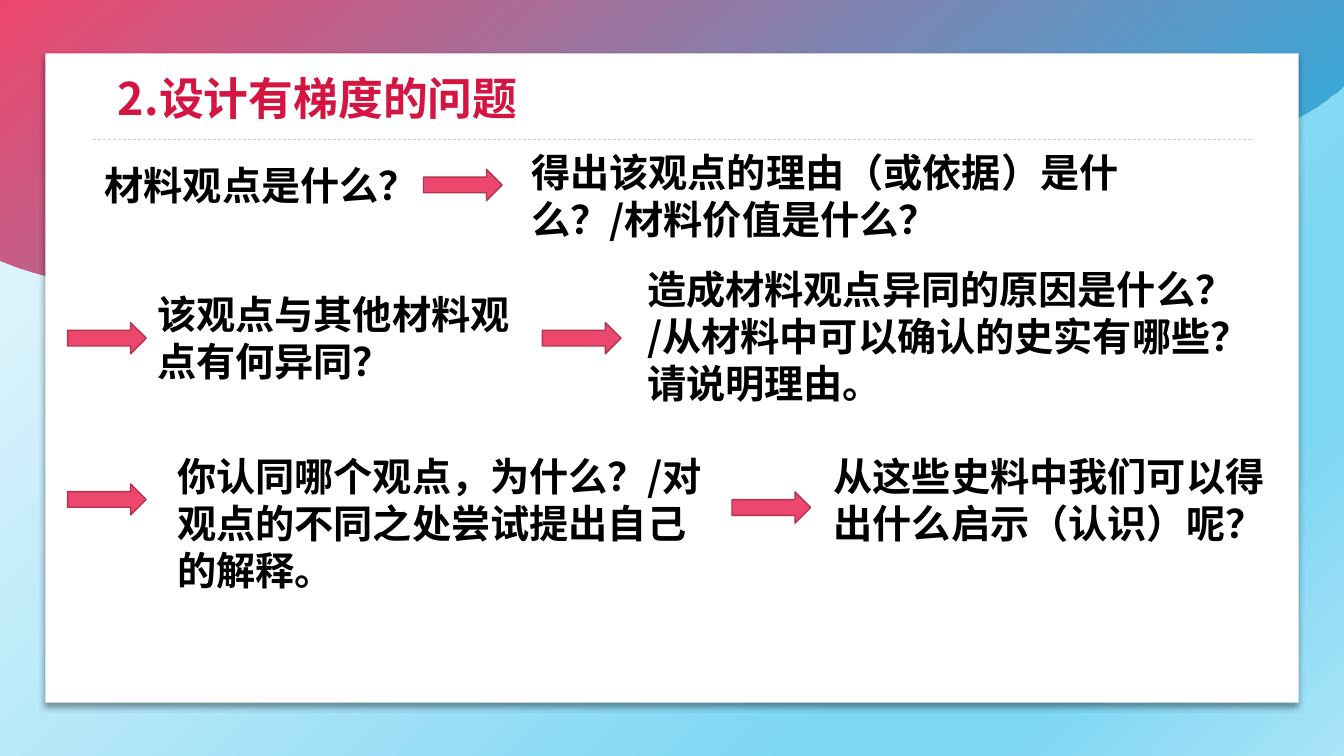
from lxml.etree import SubElement
from pptx import Presentation
from pptx.dml.color import RGBColor
from pptx.enum.dml import MSO_LINE
from pptx.enum.shapes import MSO_CONNECTOR, MSO_SHAPE
from pptx.enum.text import MSO_ANCHOR, MSO_AUTO_SIZE, PP_ALIGN
from pptx.oxml import parse_xml
from pptx.oxml.ns import nsdecls, qn
from pptx.util import Pt

PX = 9144
FONT = "Noto Sans CJK SC"
PINK = RGBColor(0xEE, 0x47, 0x6E)
DARK_PINK = RGBColor(0xB0, 0x35, 0x51)
CRIMSON = RGBColor(0xD4, 0x14, 0x41)
BLUE = RGBColor(0x16, 0xB3, 0xE8)
PALE = RGBColor(0xF1, 0xFA, 0xFE)
SKY = RGBColor(0x7D, 0xD6, 0xF3)
LIGHT_SKY = RGBColor(0xA9, 0xE4, 0xF7)
GREY = RGBColor(0xD0, 0xCE, 0xCE)
WHITE = RGBColor(0xFF, 0xFF, 0xFF)
BLACK = RGBColor(0, 0, 0)

SLIDE = (0, 0, 1333, 750)
CARD = (45, 53, 1243, 644)
ARROW_SIZE = (78, 31)
WAVE_START = (0, 258)
WAVE = [
    ((122, 304), (266, 311), (393, 274)),
    ((530, 235), (648, 151), (792, 136)),
    ((936, 121), (1088, 180), (1227, 142)),
    ((1267, 131), (1304, 111), (1333, 85)),
]
QUESTIONS = [
    ((94, 155, 351, 57), "材料观点是什么？"),
    ((517, 142, 702, 104), "得出该观点的理由（或依据）是什么？/材料价值是什么？"),
    ((146, 283, 405, 104), "该观点与其他材料观点有何异同？"),
    ((632, 258, 603, 151), "造成材料观点异同的原因是什么？/从材料中可以确认的史实有哪些？请说明理由。"),
    ((166, 444, 560, 151), "你认同哪个观点，为什么？/对观点的不同之处尝试提出自己的解释。"),
    ((817, 444, 461, 104), "从这些史料中我们可以得出什么启示（认识）呢？"),
]
ARROWS = [(420, 168), (67, 320), (538, 320), (67, 480), (726, 488)]


def emu(box):
    return [v * PX for v in box]


def set_gradient(fill, stops, direction):
    fill.gradient()
    grad = fill._fill._gradFill
    for child in list(grad):
        grad.remove(child)
    gs_lst = SubElement(grad, qn("a:gsLst"))
    for pos, color, alpha in stops:
        gs = SubElement(gs_lst, qn("a:gs"), pos=str(pos * 1000))
        clr = SubElement(gs, qn("a:srgbClr"), val=str(color))
        if alpha < 100:
            SubElement(clr, qn("a:alpha"), val=str(alpha * 1000))
    grad.append(parse_xml(direction))


def curve_points(start, curves, steps=20):
    points = []
    for a, b, end in curves:
        for i in range(1, steps + 1):
            t = i / steps
            u = 1 - t
            points.append(tuple(
                u**3 * p0 + 3 * u**2 * t * p1 + 3 * u * t**2 * p2 + t**3 * p3
                for p0, p1, p2, p3 in zip(start, a, b, end)))
        start = end
    return points


def add_backdrop(s, box):
    x, y, w, h = box
    radial = (f'<a:path {nsdecls("a")} path="circle">'
              '<a:fillToRect r="100000" b="100000"/></a:path>')
    set_gradient(s.background.fill, [(0, PALE, 100), (74, SKY, 100),
                                     (83, SKY, 100), (100, LIGHT_SKY, 100)], radial)
    points = [(x + px, y + py) for px, py in curve_points(WAVE_START, WAVE)]
    fb = s.shapes.build_freeform(x, y, scale=PX)
    fb.add_line_segments([(x + WAVE_START[0], y + WAVE_START[1])] + points + [(x + w, y)])
    sp = fb.convert_to_shape()
    sp.shadow.inherit = False
    sp.line.fill.background()
    set_gradient(sp.fill, [(0, PINK, 100), (100, BLUE, 90)],
                 f'<a:lin {nsdecls("a")} ang="3000000" scaled="0"/>')


def add_card(s, box):
    x, y, w, h = box
    sp = s.shapes.add_shape(MSO_SHAPE.RECTANGLE, *emu(box))
    sp.shadow.inherit = False
    sp.fill.solid()
    sp.fill.fore_color.rgb = WHITE
    sp.line.fill.background()
    effects = sp._element.spPr.find(qn("a:effectLst"))
    shadow = SubElement(effects, qn("a:outerShdw"), blurRad="50800", dist="38100",
                        dir="5400000", algn="t", rotWithShape="0")
    clr = SubElement(shadow, qn("a:srgbClr"), val=str(BLACK))
    SubElement(clr, qn("a:alpha"), val="40000")
    rule = s.shapes.add_connector(MSO_CONNECTOR.STRAIGHT,
                                  *emu((x + 47, y + 85, x + w - 45, y + 85)))
    SubElement(rule._element.spPr, qn("a:effectLst"))
    rule.line.color.rgb = GREY
    rule.line.width = Pt(0.5)
    rule.line.dash_style = MSO_LINE.DASH


def write_text(sp, text, size, color):
    tf = sp.text_frame
    for name, value in {"word_wrap": True, "auto_size": MSO_AUTO_SIZE.NONE,
                        "vertical_anchor": MSO_ANCHOR.TOP}.items():
        setattr(tf, name, value)
    p = tf.paragraphs[0]
    for name, value in {"alignment": PP_ALIGN.LEFT, "line_spacing": 1.0,
                        "space_before": Pt(0)}.items():
        setattr(p, name, value)
    r = p.add_run()
    r.text = text
    for name, value in {"name": FONT, "size": Pt(size), "bold": True}.items():
        setattr(r.font, name, value)
    r.font.color.rgb = color
    SubElement(r._r.get_or_add_rPr(), qn("a:ea"), typeface=FONT)


def add_title(s, box):
    x, y, w, h = box
    sp = s.shapes.title
    s.shapes._spTree.append(sp._element)
    sp.left, sp.top, sp.width, sp.height = emu((x + 62, y + 12, 1018, 64))
    write_text(sp, "2.设计有梯度的问题", 32, CRIMSON)


def add_questions(s, box):
    x, y = box[:2]
    for (left, top, w, h), text in QUESTIONS:
        write_text(s.shapes.add_textbox(*emu((x + left, y + top, w, h))), text, 28, BLACK)
    for left, top in ARROWS:
        sp = s.shapes.add_shape(MSO_SHAPE.RIGHT_ARROW,
                                *emu((x + left, y + top, *ARROW_SIZE)))
        sp.shadow.inherit = False
        sp.fill.solid()
        sp.fill.fore_color.rgb = PINK
        sp.line.color.rgb = DARK_PINK
        sp.line.width = Pt(1)


def main():
    prs = Presentation()
    prs.slide_width, prs.slide_height = emu(SLIDE[2:])
    s = prs.slides.add_slide(prs.slide_layouts[5])
    add_backdrop(s, SLIDE)
    add_card(s, CARD)
    add_title(s, CARD)
    add_questions(s, SLIDE)
    prs.save("out.pptx")


if __name__ == "__main__":
    main()
